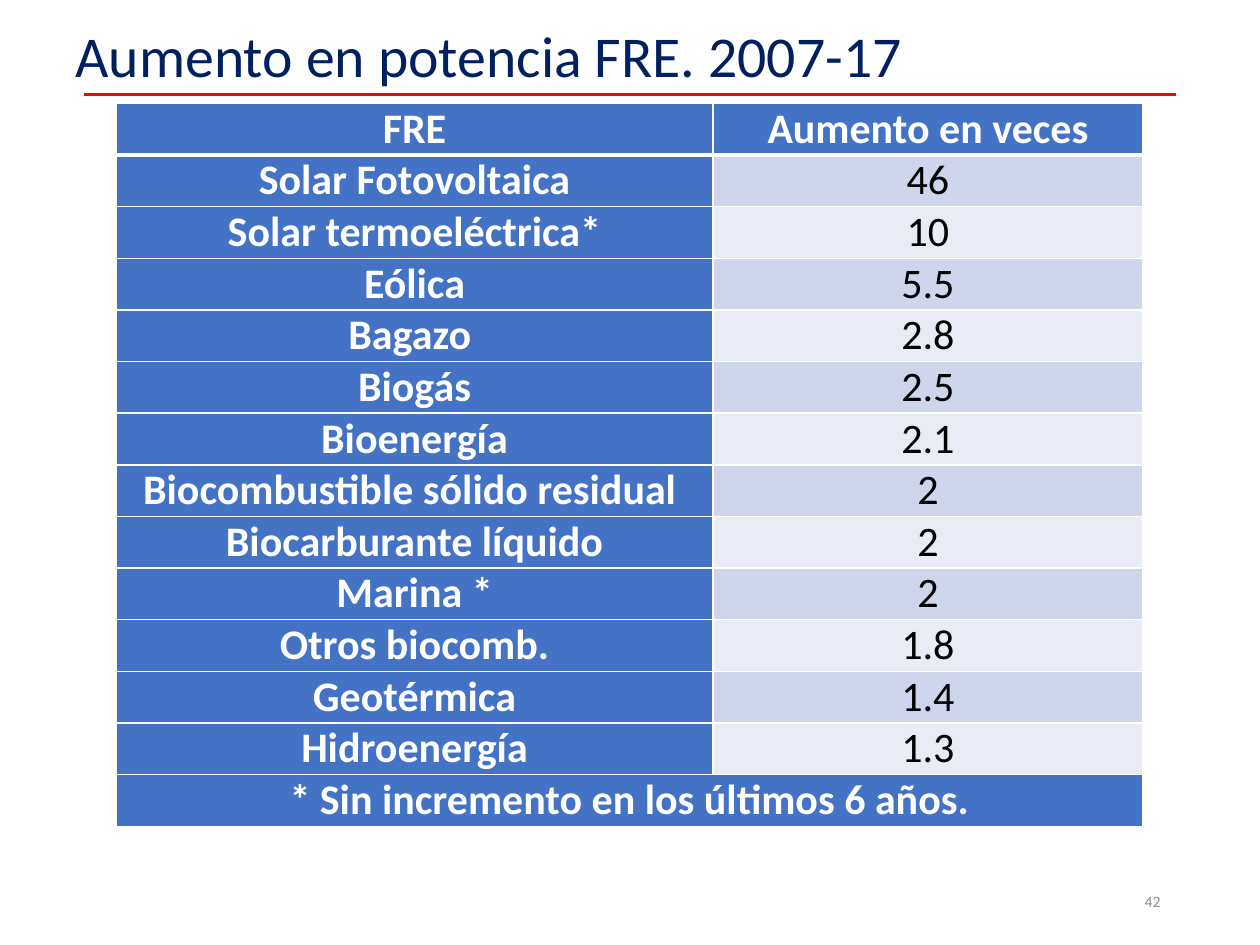
from lxml.etree import SubElement
from pptx import Presentation
from pptx.dml.color import RGBColor
from pptx.enum.shapes import MSO_CONNECTOR
from pptx.enum.text import MSO_ANCHOR, PP_ALIGN
from pptx.oxml.ns import qn
from pptx.util import Inches, Pt

TITLE = "Aumento en potencia FRE. 2007-17"
PAGE = "42"
HEADER = ("FRE", "Aumento en veces")
INCREASES = [
    ("Solar Fotovoltaica", "46"),
    ("Solar termoeléctrica*", "10"),
    ("Eólica", "5.5"),
    ("Bagazo ", "2.8"),
    ("Biogás", "2.5"),
    ("Bioenergía", "2.1"),
    ("Biocombustible sólido residual ", "2"),
    ("Biocarburante líquido", "2"),
    ("Marina *", "2"),
    ("Otros biocomb.", "1.8"),
    ("Geotérmica", "1.4"),
    ("Hidroenergía", "1.3"),
]
FOOTNOTE = "* Sin incremento en los últimos 6 años."

FONT = "Calibri"
WHITE, BLACK, NAVY, RED, GREY = "FFFFFF", "000000", "002060", "FF0000", "8C8C8C"
BLUE, BANDS = "4472C4", ("E9EBF5", "CFD5EA")
SLIDE_W, SLIDE_H = 10, 7.5
COLUMN_WIDTHS, ROW_HEIGHT = (4.74, 3.41), 0.41
TABLE_LEFT, TABLE_TOP = 0.92, 0.82
RULE_MARGIN, RULE_Y = 0.67, 0.75


def color(value):
    return RGBColor.from_string(value)


def write(frame, text, size, ink, align, bold=False):
    frame.text = text
    frame.vertical_anchor = MSO_ANCHOR.MIDDLE
    paragraph = frame.paragraphs[0]
    paragraph.alignment = align
    font = paragraph.runs[0].font
    font.name, font.size, font.bold = FONT, Pt(size), bold
    font.color.rgb = color(ink)


def add_borders(cell, widths):
    properties = cell._tc.get_or_add_tcPr()
    for side, width in widths.items():
        border = SubElement(properties, qn(f"a:ln{side}"), w=str(Pt(width)))
        fill = SubElement(border, qn("a:solidFill"))
        SubElement(fill, qn("a:srgbClr"), val=WHITE)


def fill_cell(cell, text, row, column, last):
    is_value = column == 1 and 0 < row < last
    add_borders(cell, {"L": 1, "R": 1, "T": 3 if row == 1 else 1, "B": 3 if row == 0 else 1})
    cell.fill.solid()
    cell.fill.fore_color.rgb = color(BANDS[row % 2] if is_value else BLUE)
    cell.margin_left = cell.margin_right = Inches(0.07)
    cell.margin_top = cell.margin_bottom = 0
    if text:
        write(cell.text_frame, text, 24, BLACK if is_value else WHITE, PP_ALIGN.CENTER, not is_value)
    cell.vertical_anchor = MSO_ANCHOR.TOP


def add_increase_table(slide):
    rows = [HEADER, *INCREASES, (FOOTNOTE, "")]
    last = len(rows) - 1
    table = slide.shapes.add_table(
        len(rows), len(HEADER), Inches(TABLE_LEFT), Inches(TABLE_TOP),
        Inches(sum(COLUMN_WIDTHS)), Inches(ROW_HEIGHT * len(rows)),
    ).table
    for column, width in zip(table.columns, COLUMN_WIDTHS):
        column.width = Inches(width)
    for r, texts in enumerate(rows):
        table.rows[r].height = Inches(ROW_HEIGHT)
        for c, text in enumerate(texts):
            fill_cell(table.cell(r, c), text, r, c, last)
    table.cell(last, 0).merge(table.cell(last, 1))


def add_rule(slide):
    rule = slide.shapes.add_connector(
        MSO_CONNECTOR.STRAIGHT, Inches(RULE_MARGIN), Inches(RULE_Y),
        Inches(SLIDE_W - RULE_MARGIN), Inches(RULE_Y),
    )
    rule.line.color.rgb = color(RED)
    rule.line.width = Pt(2)
    SubElement(rule._element.spPr, qn("a:effectLst"))


def main():
    """Build the slide on the growth of renewable power by source."""
    deck = Presentation()
    deck.slide_width, deck.slide_height = Inches(SLIDE_W), Inches(SLIDE_H)
    slide = deck.slides.add_slide(deck.slide_layouts[5])

    title = slide.shapes.title
    title.left, title.top, title.width, title.height = map(Inches, (0.5, 0.08, 9, 0.78))
    write(title.text_frame, TITLE, 33, NAVY, PP_ALIGN.LEFT)
    title.text_frame.paragraphs[0].line_spacing = 0.9

    page = slide.shapes.add_textbox(*map(Inches, (7.06, 6.95, 2.25, 0.4)))
    page.text_frame.word_wrap = True
    write(page.text_frame, PAGE, 9, GREY, PP_ALIGN.RIGHT)

    add_increase_table(slide)
    add_rule(slide)
    deck.save("out.pptx")


if __name__ == "__main__":
    main()
